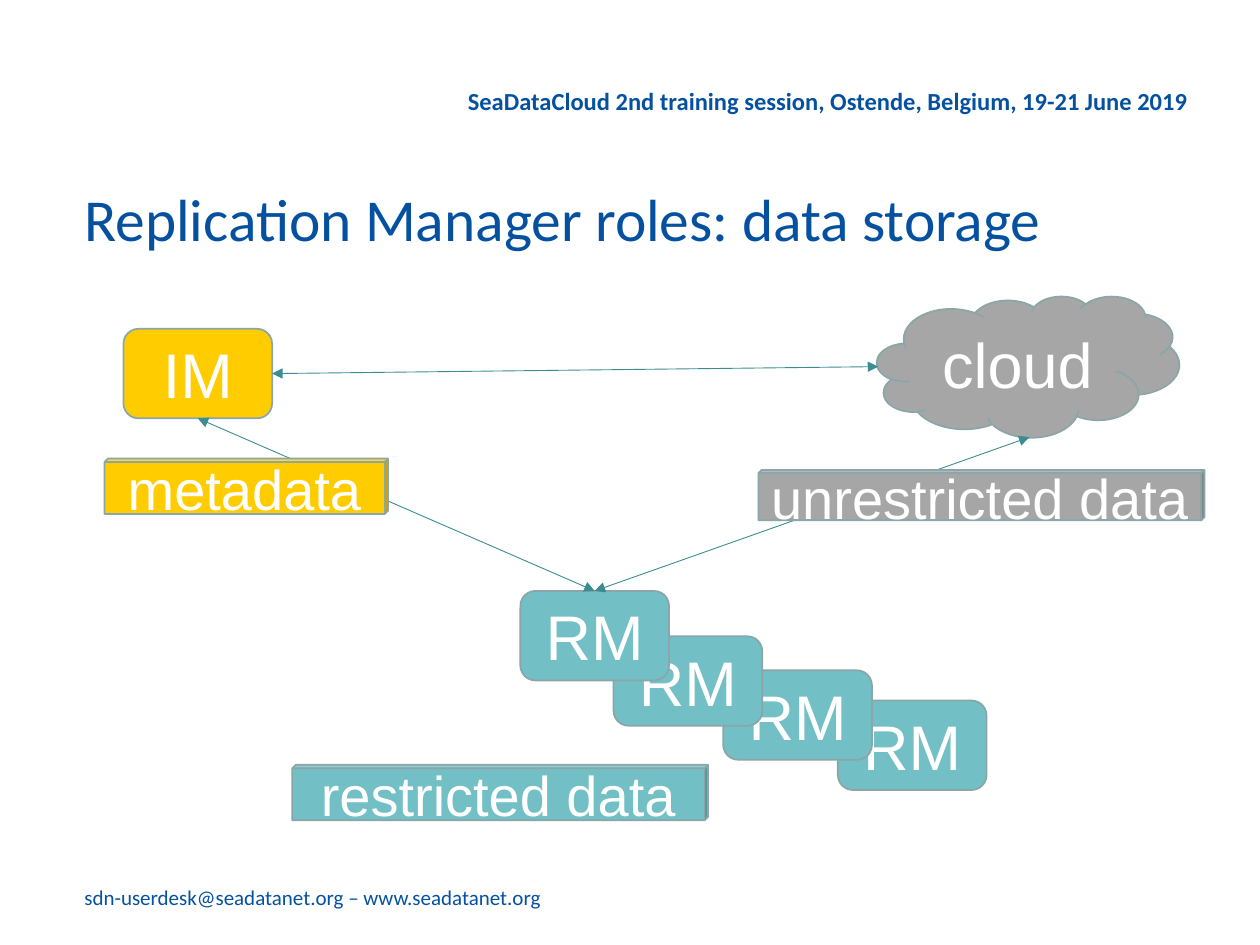
from lxml.etree import SubElement
from pptx import Presentation
from pptx.dml.color import RGBColor
from pptx.enum.shapes import MSO_CONNECTOR, MSO_SHAPE
from pptx.enum.text import MSO_ANCHOR, PP_ALIGN
from pptx.oxml.ns import qn
from pptx.util import Inches, Pt

BLUE = RGBColor(0x05, 0x51, 0xA0)
TEAL = RGBColor(0x72, 0xBF, 0xC5)
DARK_TEAL = RGBColor(0x3C, 0x8C, 0x93)
YELLOW = RGBColor(0xFF, 0xCC, 0x00)
GREY = RGBColor(0xA6, 0xA6, 0xA6)
OUTLINE = RGBColor(0x8A, 0xA6, 0xA8)
WHITE = RGBColor(0xFF, 0xFF, 0xFF)

TOP, LEFT, BOTTOM, RIGHT = range(4)
NODE_SIZE = (1.18, 0.71)
CUBE_DEPTH = 0.063


def write_text(shape, text, size, font="Arial", color=WHITE, bold=False,
               align=PP_ALIGN.CENTER, anchor=MSO_ANCHOR.MIDDLE, side_margin=0.1,
               end_margin=0.05):
    frame = shape.text_frame
    frame.word_wrap = True
    frame.vertical_anchor = anchor
    frame.margin_left = frame.margin_right = Inches(side_margin)
    frame.margin_top = frame.margin_bottom = Inches(end_margin)
    paragraph = frame.paragraphs[0]
    paragraph.alignment = align
    run = paragraph.add_run()
    run.text = text
    run.font.name = font
    run.font.size = Pt(size)
    run.font.bold = bold
    run.font.color.rgb = color


def add_label(slide, box, text, size, align=PP_ALIGN.LEFT, anchor=MSO_ANCHOR.TOP,
              bold=False):
    label = slide.shapes.add_textbox(*map(Inches, box))
    write_text(label, text, size, font="Calibri", color=BLUE, bold=bold,
               align=align, anchor=anchor, side_margin=0, end_margin=0)


def add_block(slide, kind, box, text, fill, size=36, side_margin=0.1):
    block = slide.shapes.add_shape(kind, *map(Inches, box))
    block.shadow.inherit = False
    block.fill.solid()
    block.fill.fore_color.rgb = fill
    block.line.color.rgb = OUTLINE
    block.line.width = Pt(1)
    write_text(block, text, size, side_margin=side_margin)
    return block


def add_node(slide, left, top, text, fill):
    return add_block(slide, MSO_SHAPE.ROUNDED_RECTANGLE, (left, top, *NODE_SIZE),
                     text, fill)


def add_data_bar(slide, box, text, fill):
    bar = add_block(slide, MSO_SHAPE.CUBE, box, text, fill, size=32, side_margin=0.05)
    bar.adjustments[0] = CUBE_DEPTH


def add_double_arrow(slide, start, end):
    """Draw a line with arrowheads at both ends; each end is a point or (node, site)."""
    points = [(0, 0) if isinstance(place[1], int) else place for place in (start, end)]
    arrow = slide.shapes.add_connector(
        MSO_CONNECTOR.STRAIGHT, *(Inches(value) for point in points for value in point))
    for place, connect in ((start, arrow.begin_connect), (end, arrow.end_connect)):
        if isinstance(place[1], int):
            connect(*place)
    arrow.line.color.rgb = DARK_TEAL
    arrow.line.width = Pt(0.5)
    line = arrow.line._get_or_add_ln()
    for tag in ("a:headEnd", "a:tailEnd"):
        SubElement(line, qn(tag), type="triangle")
    SubElement(arrow._element.spPr, qn("a:effectLst"))


def add_page_texts(slide):
    add_label(slide, (2.72, 0.68, 6.71, 0.24),
              "SeaDataCloud 2nd training session, Ostende, Belgium, 19-21 June 2019",
              14, align=PP_ALIGN.RIGHT, bold=True)
    add_label(slide, (0.67, 1.37, 8.82, 0.72),
              "Replication Manager roles: data storage", 34, anchor=MSO_ANCHOR.MIDDLE)
    add_label(slide, (0.67, 7.02, 4.29, 0.2),
              "sdn-userdesk@seadatanet.org – www.seadatanet.org", 12)


def add_storage_diagram(slide, left, top):
    """Place the diagram with its upper left corner at the given point."""
    def at(x, y, *size):
        return (left + x, top + y, *size)

    # The last manager drawn lies in front and takes the connectors.
    for x, y in ((5.82, 3.21), (4.91, 2.97), (4.04, 2.7), (3.3, 2.34)):
        manager = add_node(slide, *at(x, y), "RM", TEAL)
    import_manager = add_node(slide, *at(0.15, 0.26), "IM", YELLOW)
    add_block(slide, MSO_SHAPE.CLOUD, at(6.13, 0, 2.4, 1.12), "cloud", GREY)

    add_double_arrow(slide, (import_manager, BOTTOM), (manager, TOP))
    add_double_arrow(slide, at(7.34, 1.12), (manager, TOP))
    add_double_arrow(slide, at(6.14, 0.56), (import_manager, RIGHT))

    add_data_bar(slide, at(1.49, 3.72, 3.3, 0.44), "restricted data", TEAL)
    add_data_bar(slide, at(5.19, 1.38, 3.54, 0.4), "unrestricted data", GREY)
    add_data_bar(slide, at(0, 1.29, 2.25, 0.44), "metadata", YELLOW)


def main():
    presentation = Presentation()
    presentation.slide_width = Inches(10)
    presentation.slide_height = Inches(7.5)
    slide = presentation.slides.add_slide(presentation.slide_layouts[6])
    add_page_texts(slide)
    add_storage_diagram(slide, 0.83, 2.35)
    presentation.save("out.pptx")


if __name__ == "__main__":
    main()
